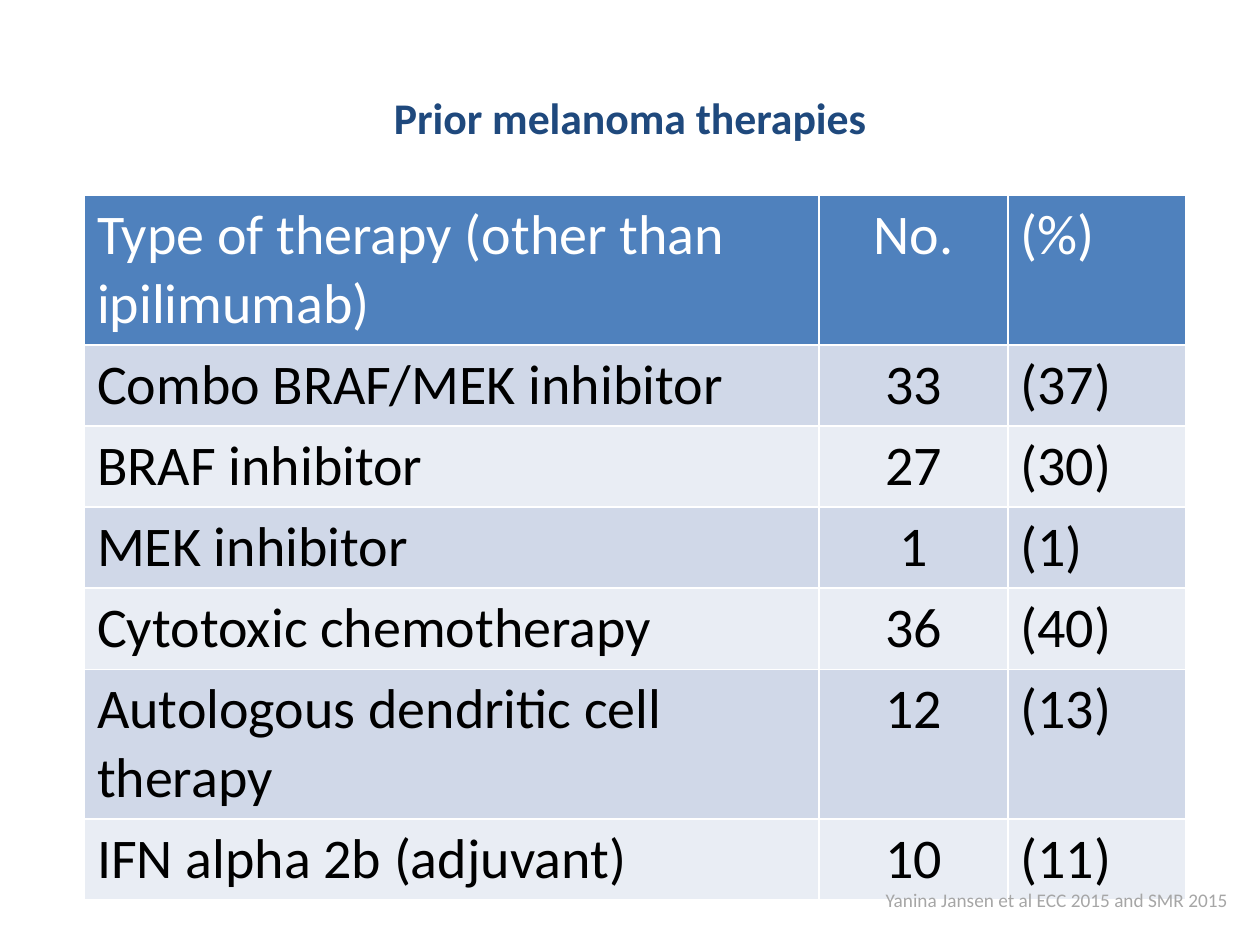
from dataclasses import dataclass

from pptx import Presentation
from pptx.dml.color import RGBColor as Rgb
from pptx.enum.text import MSO_ANCHOR as Anchor, MSO_AUTO_SIZE as AutoSize, PP_ALIGN as Align
from pptx.util import Inches, Pt


@dataclass(frozen=True)
class Theme:
    """Colours, type sizes and font of the slide."""
    font: str = "Calibri"
    heading: str = "1F497D"
    header_fill: str = "4F81BD"
    header_text: str = "FFFFFF"
    body_text: str = "000000"
    credit_text: str = "A6A6A6"
    bands: tuple = ("D0D8E8", "E9EDF4")
    heading_size: int = 25
    table_size: int = 32
    credit_size: int = 11


THEME = Theme()
SLIDE_WIDTH, SLIDE_HEIGHT = Inches(10), Inches(7.5)
TITLE_ONLY = 5
COLUMN_SHARES = (5.83, 1.5, 1.41)
COLUMN_ALIGNS = (Align.LEFT, Align.CENTER, Align.LEFT)
ROW_SHARES = (1.17, 0.63, 0.63, 0.63, 0.63, 0.81, 0.63)
THERAPIES = (
    ("Type of therapy (other than ipilimumab)", "No.", "(%)"),
    ("Combo BRAF/MEK inhibitor", "33", "(37)"),
    ("BRAF inhibitor", "27", "(30)"),
    ("MEK inhibitor", "1", "(1)"),
    ("Cytotoxic chemotherapy", "36", "(40)"),
    ("Autologous dendritic cell therapy", "12", "(13)"),
    ("IFN alpha 2b (adjuvant)", "10", "(11)"),
)


def share_box(left, top, width, height):
    """Turn shares of the slide's size into a box of lengths."""
    return (int(left * SLIDE_WIDTH), int(top * SLIDE_HEIGHT),
            int(width * SLIDE_WIDTH), int(height * SLIDE_HEIGHT))


def apply_format(target, values):
    """Set each named attribute on the target."""
    for name, value in values.items():
        setattr(target, name, value)


def write_text(frame, wording, size, colour, align=Align.LEFT, bold=False):
    """Put one formatted paragraph into a text frame."""
    paragraph = frame.paragraphs[0]
    paragraph.alignment = align
    run = paragraph.add_run()
    run.text = wording
    apply_format(run.font, {"name": THEME.font, "size": Pt(size), "bold": bold})
    run.font.color.rgb = Rgb.from_string(colour)


def place_heading(slide, box):
    """Move and format the title placeholder."""
    heading = slide.shapes.title
    apply_format(heading, dict(zip(("left", "top", "width", "height"), box)))
    heading.text_frame.vertical_anchor = Anchor.MIDDLE
    write_text(heading.text_frame, "Prior melanoma therapies",
               THEME.heading_size, THEME.heading, Align.CENTER, True)


def place_therapies(slide, box):
    """Draw the banded table of therapies inside the box."""
    therapies = slide.shapes.add_table(len(THERAPIES), len(COLUMN_SHARES), *box).table
    for column, share in zip(therapies.columns, COLUMN_SHARES):
        column.width = int(box[2] * share / sum(COLUMN_SHARES))
    for row, share in zip(therapies.rows, ROW_SHARES):
        row.height = int(box[3] * share / sum(ROW_SHARES))
    for row_index, entries in enumerate(THERAPIES):
        is_header = row_index == 0
        fill = THEME.header_fill if is_header else THEME.bands[(row_index - 1) % 2]
        colour = THEME.header_text if is_header else THEME.body_text
        for column_index, entry in enumerate(entries):
            cell = therapies.cell(row_index, column_index)
            cell.fill.solid()
            cell.fill.fore_color.rgb = Rgb.from_string(fill)
            write_text(cell.text_frame, entry, THEME.table_size, colour,
                       COLUMN_ALIGNS[column_index])


def place_credit(slide, box):
    """Write the study reference inside the box."""
    credit = slide.shapes.add_textbox(*box).text_frame
    apply_format(credit, {"word_wrap": False, "auto_size": AutoSize.SHAPE_TO_FIT_TEXT})
    write_text(credit, "Yanina Jansen et al ECC 2015 and SMR 2015",
               THEME.credit_size, THEME.credit_text)


def main():
    """Build and save the slide."""
    deck = Presentation()
    apply_format(deck, {"slide_width": SLIDE_WIDTH, "slide_height": SLIDE_HEIGHT})
    slide = deck.slides.add_slide(deck.slide_layouts[TITLE_ONLY])
    place_heading(slide, share_box(0.05, 0.04, 0.9, 1 / 6))
    place_therapies(slide, share_box(0.067, 1.55 / 7.5, 0.874, 5.13 / 7.5))
    place_credit(slide, share_box(0.693, 7 / 7.5, 0.295, 0.29 / 7.5))
    deck.save("out.pptx")


if __name__ == "__main__":
    main()
